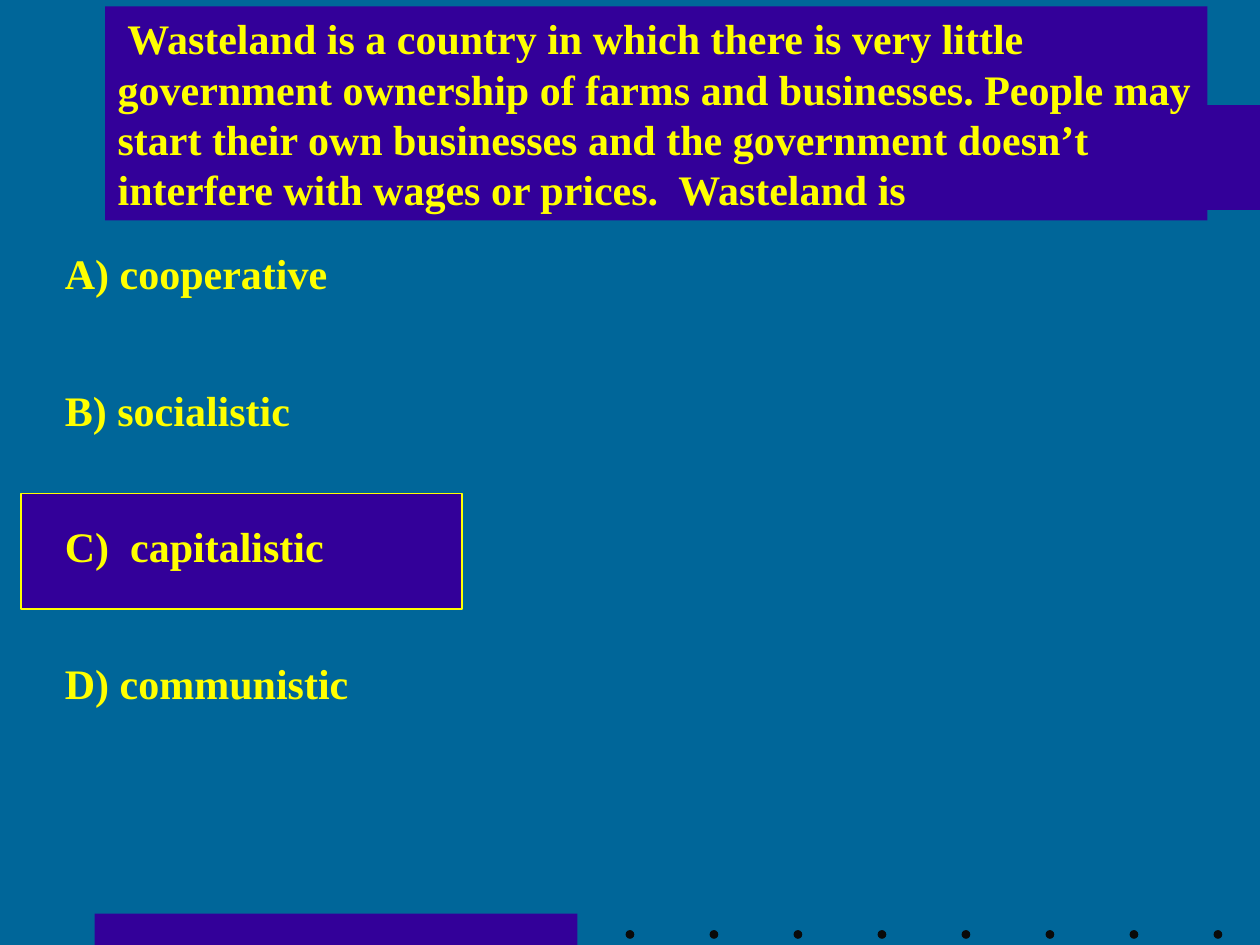
from dataclasses import dataclass

from pptx import Presentation
from pptx.dml.color import RGBColor
from pptx.enum.shapes import MSO_SHAPE
from pptx.enum.text import MSO_ANCHOR, PP_ALIGN
from pptx.util import Pt

TEAL, PURPLE, YELLOW, BLACK = "006699", "330099", "FFFF00", "0A0A0A"
FONT = "Times New Roman"

QUESTION = (
    " Wasteland is a country in which there is very little government ownership "
    "of farms and businesses. People may start their own businesses and the "
    "government doesn’t interfere with wages or prices.  Wasteland is"
)
ANSWERS = ["A) cooperative", "B) socialistic", "C)  capitalistic", "D) communistic"]
ANSWER_TOP, ANSWER_PITCH = 138, 78
DOT_COUNT, DOT_PITCH, DOT_SIZE = 8, 48, 5


@dataclass
class Box:
    """Position and size in points."""
    left: float
    top: float
    width: float
    height: float

    def lengths(self) -> tuple:
        return Pt(self.left), Pt(self.top), Pt(self.width), Pt(self.height)


def set_fill(fill, color: str) -> None:
    fill.solid()
    fill.fore_color.rgb = RGBColor.from_string(color)


def add_block(s, box: Box, color: str, kind=MSO_SHAPE.RECTANGLE, line: str = ""):
    sp = s.shapes.add_shape(kind, *box.lengths())
    sp.shadow.inherit = False
    set_fill(sp.fill, color)
    if line:
        set_fill(sp.line.fill, line)
        sp.line.width = Pt(1)
    else:
        sp.line.fill.background()
    return sp


def write(sp, text: str, *, size: float = 24, color: str = YELLOW, bold: bool = True) -> None:
    tf = sp.text_frame
    tf.word_wrap = True
    tf.vertical_anchor = MSO_ANCHOR.TOP
    p = tf.paragraphs[0]
    p.alignment = PP_ALIGN.LEFT
    p.line_spacing = 1.0
    r = p.add_run()
    r.text = text
    r.font.name, r.font.size, r.font.bold = FONT, Pt(size), bold
    r.font.color.rgb = RGBColor.from_string(color)


def add_answer(s, index: int, text: str) -> None:
    box = Box(30, ANSWER_TOP + index * ANSWER_PITCH, 660, 36)
    write(s.shapes.add_textbox(*box.lengths()), text)


def main() -> None:
    prs = Presentation()
    prs.slide_width, prs.slide_height = Pt(720), Pt(540)
    s = prs.slides.add_slide(prs.slide_layouts[5])
    set_fill(s.background.fill, TEAL)

    # Bands and the row of dots
    add_block(s, Box(54, 522, 276, 18), PURPLE)
    for i in range(DOT_COUNT):
        dot = Box(357.5 + i * DOT_PITCH, 531.5, DOT_SIZE, DOT_SIZE)
        add_block(s, dot, BLACK, MSO_SHAPE.OVAL)
    add_block(s, Box(60, 60, 660, 60), PURPLE)

    # Frame marking the correct answer
    add_block(s, Box(12, 282, 252, 66), PURPLE, line=YELLOW)

    # Question, brought in front of the bands
    title = s.shapes.title
    title.left, title.top, title.width, title.height = Box(60, 3.6, 630, 122.4).lengths()
    set_fill(title.fill, PURPLE)
    write(title, QUESTION)
    title.element.getparent().append(title.element)

    # Answers
    for i, text in enumerate(ANSWERS):
        add_answer(s, i, text)

    prs.save("out.pptx")


if __name__ == "__main__":
    main()
